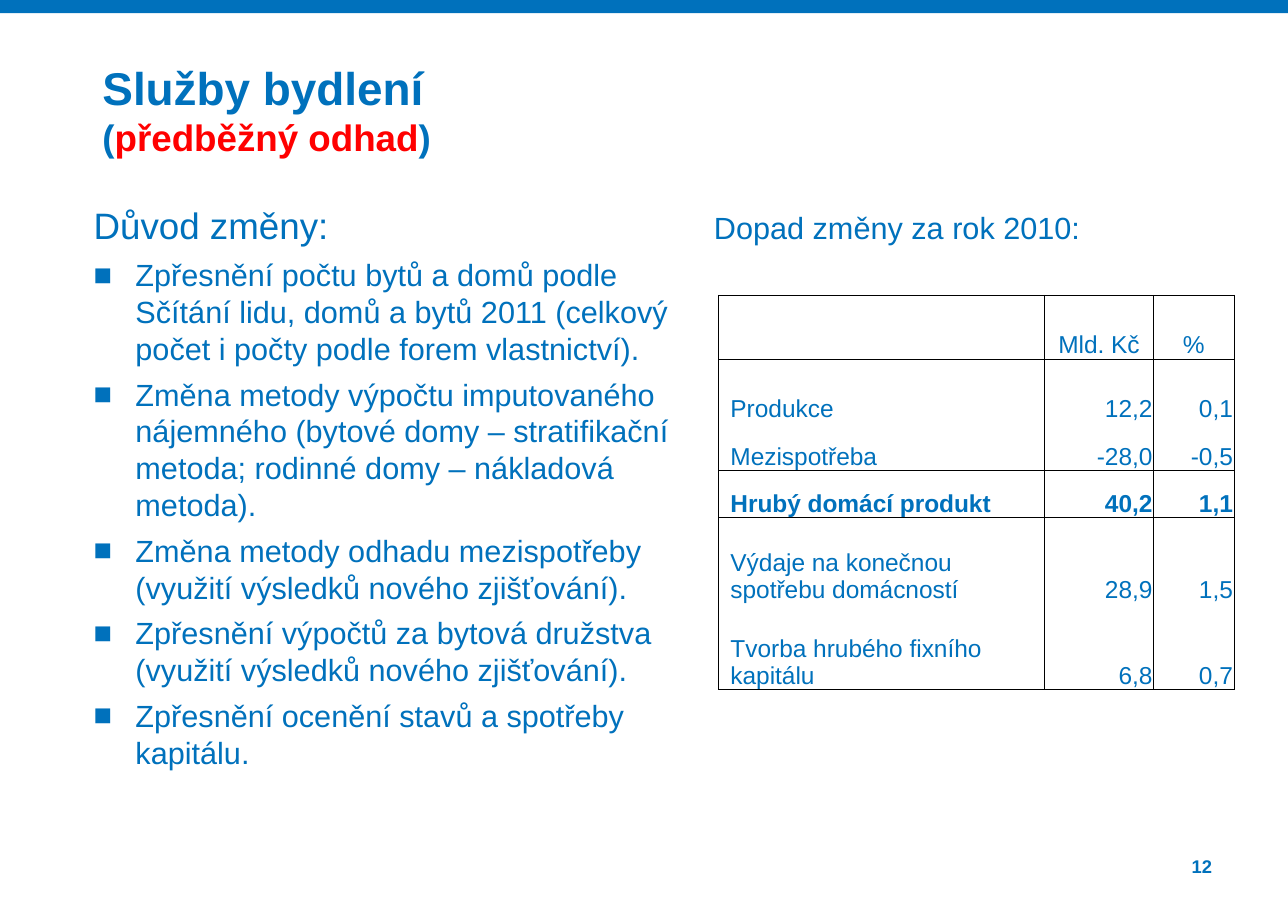
from lxml.etree import SubElement
from pptx import Presentation
from pptx.dml.color import RGBColor
from pptx.enum.shapes import MSO_SHAPE
from pptx.enum.text import MSO_ANCHOR, PP_ALIGN
from pptx.oxml.ns import qn
from pptx.util import Inches, Pt

# Content
COLORS = {"blue": "0071BC", "red": "FF0000", "black": "000000"}
FONT = "Arial"
TITLE = "Služby bydlení"
SUBTITLE = [("(", "blue"), ("předběžný odhad", "red"), (")", "blue")]
REASON_HEADING = "Důvod změny:"
REASONS = [
    "Zpřesnění počtu bytů a domů podle Sčítání lidu, domů a bytů 2011 "
    "(celkový počet i počty podle forem vlastnictví).",
    "Změna metody výpočtu imputovaného nájemného (bytové domy – stratifikační "
    "metoda; rodinné domy – nákladová metoda).",
    "Změna metody odhadu mezispotřeby (využití výsledků nového zjišťování).",
    "Zpřesnění výpočtů za bytová družstva (využití výsledků nového zjišťování).",
    "Zpřesnění ocenění stavů a spotřeby kapitálu.",
]
IMPACT_HEADING = "Dopad změny za rok 2010:"
IMPACT_ROWS = [
    ("", "Mld. Kč", "%"),
    ("Produkce", "12,2", "0,1"),
    ("Mezispotřeba", "-28,0", "-0,5"),
    ("Hrubý domácí produkt", "40,2", "1,1"),
    ("Výdaje na konečnou\vspotřebu domácností", "28,9", "1,5"),
    ("Tvorba hrubého fixního kapitálu", "6,8", "0,7"),
]
COLUMN_WIDTHS = [2.96, 0.99, 0.73]
ROW_HEIGHTS = [0.58, 0.58, 0.43, 0.43, 0.78, 0.78]
GROUPS = [(0, 0), (1, 2), (3, 3), (4, 5)]  # first and last row of each ruled group
TOTAL_ROW = 3


def set_values(target, values):
    for name, value in values.items():
        setattr(target, name, value)


def format_font(font, size, color="blue", bold=False):
    set_values(font, {"name": FONT, "size": Pt(size), "bold": bold})
    font.color.rgb = RGBColor.from_string(COLORS[color])


def prepare_frame(shape, top=0, bottom=0):
    frame = shape.text_frame
    set_values(frame, {
        "word_wrap": True, "vertical_anchor": MSO_ANCHOR.TOP,
        "margin_left": 0, "margin_right": 0,
        "margin_top": Inches(top), "margin_bottom": Inches(bottom),
    })
    return frame


def add_text(slide, box, text, size, bold=False, inset=0):
    shape = slide.shapes.add_textbox(*map(Inches, box))
    frame = prepare_frame(shape, inset, inset)
    paragraph = frame.paragraphs[0]
    paragraph.text = text
    format_font(paragraph.font, size, bold=bold)
    return frame


def add_bullet(paragraph):
    properties = paragraph._p.get_or_add_pPr()
    indent = Inches(0.38)
    properties.set("marL", str(indent))
    properties.set("indent", str(-indent))
    SubElement(properties, qn("a:buFont"), typeface=FONT)
    SubElement(properties, qn("a:buChar"), char="■")


def set_borders(cell, sides):
    properties = cell._tc.get_or_add_tcPr()
    for position, side in enumerate("LRTB"):
        line = SubElement(properties, qn(f"a:ln{side}"), w=str(Pt(0.5)))
        if side in sides:
            fill = SubElement(line, qn("a:solidFill"))
            SubElement(fill, qn("a:srgbClr"), val=COLORS["black"])
        else:
            SubElement(line, qn("a:noFill"))
        properties.remove(line)
        properties.insert(position, line)


def add_title(slide):
    title = slide.shapes.title
    box = {"left": 0.93, "top": 0.49, "width": 10.08, "height": 1.06}
    set_values(title, {name: Inches(value) for name, value in box.items()})
    frame = prepare_frame(title, top=0.05)
    lines = [(30, [(TITLE, "blue")]), (24, SUBTITLE)]
    for index, (size, parts) in enumerate(lines):
        paragraph = frame.add_paragraph() if index else frame.paragraphs[0]
        set_values(paragraph, {"alignment": PP_ALIGN.LEFT, "line_spacing": 1.0,
                               "space_before": Pt(0)})
        for text, color in parts:
            run = paragraph.add_run()
            run.text = text
            format_font(run.font, size, color, bold=True)


def add_reasons(slide):
    frame = add_text(slide, (0.85, 1.77, 5.63, 5.51), REASON_HEADING, 24)
    frame.paragraphs[0].line_spacing = Pt(34)
    for reason in REASONS:
        paragraph = frame.add_paragraph()
        paragraph.text = reason
        add_bullet(paragraph)
        set_values(paragraph, {"line_spacing": Pt(24), "space_before": Pt(6)})
        format_font(paragraph.font, 20)


def add_impact_table(slide):
    box = (6.52, 2.68, sum(COLUMN_WIDTHS), sum(ROW_HEIGHTS))
    frame = slide.shapes.add_table(len(IMPACT_ROWS), len(COLUMN_WIDTHS),
                                   *map(Inches, box))
    table = frame.table
    set_values(table, {"first_row": False, "horz_banding": False})
    for column, width in zip(table.columns, COLUMN_WIDTHS):
        column.width = Inches(width)
    for row, height in zip(table.rows, ROW_HEIGHTS):
        row.height = Inches(height)

    for first, last in GROUPS:
        for row in range(first, last + 1):
            sides = "LR" + "T" * (row == first) + "B" * (row == last)
            for column, text in enumerate(IMPACT_ROWS[row]):
                cell = table.cell(row, column)
                set_values(cell, {
                    "text": text, "vertical_anchor": MSO_ANCHOR.BOTTOM,
                    "margin_left": Inches(0.01), "margin_right": Inches(0.01),
                    "margin_top": Inches(0.01), "margin_bottom": 0,
                })
                cell.fill.background()
                set_borders(cell, sides)
                paragraph = cell.text_frame.paragraphs[0]
                if column == 0:
                    paragraph.alignment = PP_ALIGN.LEFT
                    paragraph._p.get_or_add_pPr().set("marL", str(Inches(0.1)))
                else:
                    paragraph.alignment = PP_ALIGN.RIGHT if row else PP_ALIGN.CENTER
                format_font(paragraph.font, 16, bold=row == TOTAL_ROW)


def main():
    presentation = Presentation()
    set_values(presentation, {"slide_width": Inches(11.69),
                              "slide_height": Inches(8.27)})
    slide = presentation.slides.add_slide(presentation.slide_layouts[5])

    # Top band
    band = slide.shapes.add_shape(MSO_SHAPE.RECTANGLE, 0, 0,
                                  presentation.slide_width, Inches(0.12))
    band.shadow.inherit = False
    band.fill.solid()
    band.fill.fore_color.rgb = RGBColor.from_string(COLORS["blue"])
    band.line.fill.background()

    # Title and reasons
    add_title(slide)
    add_reasons(slide)

    # Impact in 2010
    add_text(slide, (6.48, 1.85, 4.17, 0.55), IMPACT_HEADING, 20, inset=0.05)
    add_impact_table(slide)

    # Page number
    number = add_text(slide, (10.22, 7.76, 0.78, 0.21), "12", 12, bold=True)
    number.paragraphs[0].alignment = PP_ALIGN.RIGHT

    presentation.save("out.pptx")


if __name__ == "__main__":
    main()
